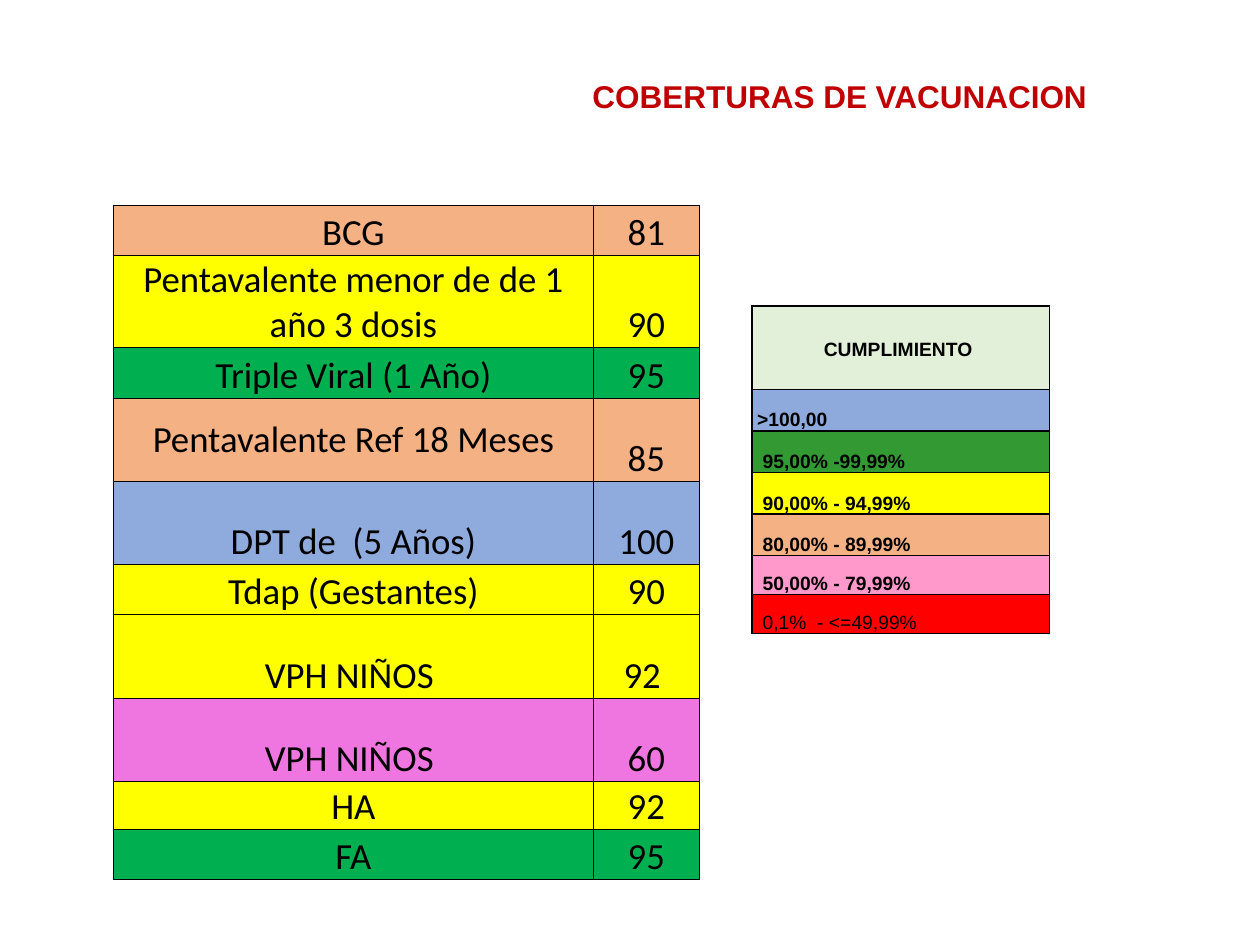
from lxml import etree
from pptx import Presentation
from pptx.dml.color import RGBColor
from pptx.enum import text
from pptx.oxml.ns import qn
from pptx.util import Inches, Pt

ORANGE, YELLOW, GREEN, BLUE = "F4B183", "FFFF00", "00B050", "8FAADC"
BOTTOM, MIDDLE = text.MSO_ANCHOR.BOTTOM, text.MSO_ANCHOR.MIDDLE
LEFT, CENTER = text.PP_ALIGN.LEFT, text.PP_ALIGN.CENTER

# vaccine, coverage, fill, row height
COVERAGE = [
    ("BCG", "81", ORANGE, 0.4),
    ("Pentavalente menor de de 1 año 3 dosis", "90", YELLOW, 0.73),
    ("Triple Viral (1 Año)", "95", GREEN, 0.4),
    ("Pentavalente Ref 18 Meses", "85", ORANGE, 0.66),
    ("DPT de  (5 Años)", "100", BLUE, 0.66),
    ("Tdap (Gestantes)", "90", YELLOW, 0.4),
    ("VPH NIÑOS ", "92 ", YELLOW, 0.66),
    ("VPH NIÑOS ", "60", "EF76E0", 0.66),
    ("HA", "92", YELLOW, 0.38),
    ("FA", "95", GREEN, 0.4),
]
# range, fill, row height
LEGEND = [
    ("CUMPLIMIENTO ", "E2F0D9", 0.66),
    (">100,00", "8EA9DB", 0.33),
    (" 95,00% -99,99%", "339933", 0.33),
    (" 90,00% - 94,99%", YELLOW, 0.33),
    (" 80,00% - 89,99%", ORANGE, 0.33),
    (" 50,00% - 79,99%", "FF99CC", 0.31),
    (" 0,1%  - <=49,99%", "FF0000", 0.31),
]


def rgb(color):
    return RGBColor.from_string(color)


def add_run(p, words, font, size, color="000000", bold=False):
    r = p.add_run()
    r.text = words
    r.font.name, r.font.size, r.font.bold = font, Pt(size), bold
    r.font.color.rgb = rgb(color)


def set_borders(cell, widths):
    """Draw black borders; widths are points for left, right, top, bottom."""
    tc_pr = cell._tc.get_or_add_tcPr()
    for side, width in zip("LRTB", widths):
        ln = etree.SubElement(tc_pr, qn(f"a:ln{side}"), w=str(Pt(width)))
        fill = etree.SubElement(ln, qn("a:solidFill"))
        etree.SubElement(fill, qn("a:srgbClr"), val="000000")


def format_cell(cell, fill, borders, margins, anchor, align):
    """Style a cell and return its paragraph; margins are left, top, right, bottom."""
    set_borders(cell, borders)
    cell.fill.solid()
    cell.fill.fore_color.rgb = rgb(fill)
    (cell.margin_left, cell.margin_top,
     cell.margin_right, cell.margin_bottom) = map(Inches, margins)
    cell.vertical_anchor = anchor
    p = cell.text_frame.paragraphs[0]
    p.alignment = align
    return p


def add_grid(s, left, top, widths, heights):
    box = map(Inches, (left, top, sum(widths), sum(heights)))
    table = s.shapes.add_table(len(heights), len(widths), *box).table
    table.first_row = table.horz_banding = False
    for column, width in zip(table.columns, widths):
        column.width = Inches(width)
    for row, height in zip(table.rows, heights):
        row.height = Inches(height)
    return table


def add_title(s, left, top, width, height):
    sp = s.shapes.title
    sp.left, sp.top, sp.width, sp.height = map(Inches, (left, top, width, height))
    tf = sp.text_frame
    tf.word_wrap = True
    tf.auto_size = text.MSO_AUTO_SIZE.SHAPE_TO_FIT_TEXT
    tf.vertical_anchor = text.MSO_ANCHOR.TOP
    p = tf.paragraphs[0]
    p.alignment = CENTER
    add_run(p, "COBERTURAS DE VACUNACION  ", "Arial", 18, "C00000", True)


def add_legend(s, left, top, width):
    table = add_grid(s, left, top, [width], [row[-1] for row in LEGEND])
    last = len(LEGEND) - 1
    for i, (words, fill, _) in enumerate(LEGEND):
        anchor, align = (BOTTOM, LEFT) if i else (MIDDLE, CENTER)
        p = format_cell(table.cell(i, 0), fill, [1] * 4, (0.04, 0, 0.04, 0), anchor, align)
        p.line_spacing = 1.15
        add_run(p, words, "Arial", 11, bold=i < last)


def add_coverage(s, left, top, widths):
    """Table of vaccines with a thick outline and thin inner lines."""
    table = add_grid(s, left, top, widths, [row[-1] for row in COVERAGE])
    last = len(COVERAGE) - 1
    for i, (vaccine, value, fill, _) in enumerate(COVERAGE):
        for j, words in enumerate((vaccine, value)):
            outer = (j == 0, j == 1, i == 0, i == last)
            borders = [1 if edge else 0.5 for edge in outer]
            anchor = MIDDLE if words == "Pentavalente Ref 18 Meses" else BOTTOM
            p = format_cell(table.cell(i, j), fill, borders,
                            (0.01, 0.01, 0.01, 0), anchor, CENTER)
            add_run(p, words, "Calibri", 21)


def main():
    prs = Presentation()
    prs.slide_width, prs.slide_height = Inches(10), Inches(7.5)
    s = prs.slides.add_slide(prs.slide_layouts[5])
    add_title(s, 3.87, 0.56, 5.73, 0.4)
    add_legend(s, 5.97, 2.43, 2.36)
    add_coverage(s, 0.9, 1.63, [3.81, 0.84])
    prs.save("out.pptx")


if __name__ == "__main__":
    main()
